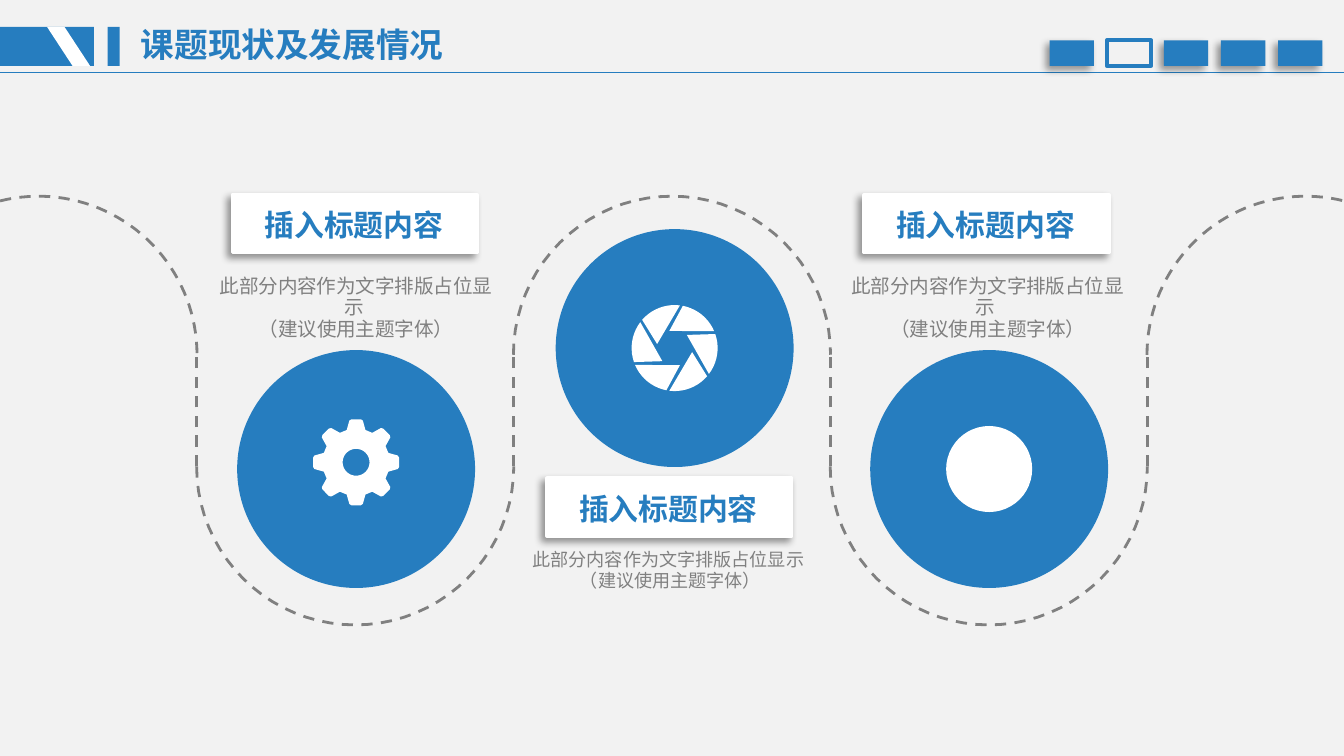
from math import cos, sin, radians
from lxml import etree
from pptx import Presentation
from pptx.dml.color import RGBColor
from pptx.enum import dml, shapes, text
from pptx.oxml.ns import qn
from pptx.util import Inches, Pt

BLUE = RGBColor(0x26, 0x7D, 0xBF)
GRAY = RGBColor(0x80, 0x80, 0x80)
PALE = RGBColor(0xF2, 0xF2, 0xF2)
WHITE = RGBColor(0xFF, 0xFF, 0xFF)
FONT = "Noto Sans CJK SC"
RECT = shapes.MSO_SHAPE.RECTANGLE
OVAL = shapes.MSO_SHAPE.OVAL

# Wave geometry: alternating arcs, one lane wide each
LANE, RADIUS = 2.357, 1.18
HIGH, LOW = 2.64, 3.47


def paint(shape, fill=None, line=None, width=1.0, dash=False):
    shape.shadow.inherit = False
    if fill is None:
        shape.fill.background()
    else:
        shape.fill.solid()
        shape.fill.fore_color.rgb = fill
    if line is None:
        shape.line.fill.background()
    else:
        stroke(shape, line, width, dash)


def stroke(shape, color, width, dash=False):
    shape.line.color.rgb = color
    shape.line.width = Pt(width)
    if dash:
        shape.line.dash_style = dml.MSO_LINE.DASH


def block(slide, kind, box, fill=None, **style):
    shape = slide.shapes.add_shape(kind, *map(Inches, box))
    paint(shape, fill, **style)
    return shape


def cast(shape):
    """Add a soft shadow falling to the lower left."""
    effect = shape._element.spPr.find(qn("a:effectLst"))
    outer = etree.SubElement(effect, qn("a:outerShdw"), blurRad="50800",
                             dist="38100", dir="8100000", algn="tr",
                             rotWithShape="0")
    color = etree.SubElement(outer, qn("a:srgbClr"), val="000000")
    etree.SubElement(color, qn("a:alpha"), val="40000")


def rule(slide, start, end, width, color, dash=False):
    line = slide.shapes.add_connector(shapes.MSO_CONNECTOR.STRAIGHT,
                                      *map(Inches, start + end))
    stroke(line, color, width, dash)
    etree.SubElement(line._element.spPr, qn("a:effectLst"))


def outline(slide, rings, close=True, **style):
    """Draw one freeform made of one or more rings of points."""
    rings = [[(Inches(x), Inches(y)) for x, y in ring] for ring in rings]
    pen = slide.shapes.build_freeform(*rings[0][0])
    for i, ring in enumerate(rings):
        if i:
            pen.move_to(*ring[0])
        pen.add_line_segments(ring[1:], close=close)
    paint(pen.convert_to_shape(), **style)


def arc(x, y, r, start, end, steps=40):
    turns = [radians(start + (end - start) * i / steps)
             for i in range(steps + 1)]
    return [(x + r * cos(t), y + r * sin(t)) for t in turns]


def spin(x, y, points, angle):
    c, s = cos(radians(angle)), sin(radians(angle))
    return [(x + a * c - b * s, y + a * s + b * c) for a, b in points]


def label(slide, box, words, size, color, bold=False, wrap=False):
    frame = slide.shapes.add_textbox(*map(Inches, box)).text_frame
    frame.word_wrap = wrap
    para = frame.paragraphs[0]
    para.text = words
    for run in para.runs:
        run.font.size, run.font.bold, run.font.name = Pt(size), bold, FONT
        run.font.color.rgb = color
        east = etree.SubElement(run.font._element, qn("a:ea"))
        east.set("typeface", FONT)
    return frame


def header(slide, top):
    # Flag with a slanted cut, then the title
    block(slide, RECT, (0, top, 0.7, 0.29), BLUE)
    cut = [(0.35, top), (0.48, top), (0.67, top + 0.29), (0.54, top + 0.29)]
    outline(slide, [cut], fill=WHITE)
    block(slide, RECT, (0.8, top, 0.09, 0.29), BLUE)
    label(slide, (0.95, top - 0.07, 2.51, 0.4), "课题现状及发展情况",
          18, BLUE, bold=True)
    rule(slide, (0, top + 0.34), (10.1, top + 0.34), 1, BLUE)
    # Section markers; the open one is the current section
    for i in range(5):
        box = (7.81 + 0.425 * i, top + 0.1, 0.33, 0.19)
        if i == 1:
            block(slide, RECT, box, line=BLUE, width=2)
        else:
            cast(block(slide, RECT, box, BLUE))


def wave(slide, left):
    look = dict(line=GRAY, width=1.5, dash=True)
    spans = [(256, 360), (180, 0), (180, 360), (180, 0), (180, 284)]
    for i, (start, end) in enumerate(spans):
        y = LOW if i % 2 else HIGH
        points = arc(left + LANE * (i - 0.5), y, RADIUS, start, end)
        outline(slide, [points], close=False, **look)
    for i in range(4):
        x = left + LANE * i
        rule(slide, (x, LOW), (x, HIGH), 1.5, GRAY, dash=True)


def gear(slide, x, y):
    tooth = [(0.24, -0.07), (0.31, -0.05), (0.32, -0.035),
             (0.32, 0.035), (0.31, 0.05), (0.24, 0.07)]
    rim = [p for i in range(8) for p in spin(x, y, tooth, 45 * i)]
    outline(slide, [rim, arc(x, y, 0.1, 360, 0)], fill=WHITE)


def lens(slide, x, y):
    blade = arc(0, 0, 0.32, -83, -139, 10) + [(-0.13, -0.03)]
    outline(slide, [spin(x, y, blade, 60 * i) for i in range(6)], fill=WHITE)


def dot(slide, x, y):
    block(slide, OVAL, (x - 0.32, y - 0.32, 0.64, 0.64), WHITE)


def disc(slide, x, y, icon, lift):
    block(slide, OVAL, (x - 0.885, y - 0.885, 1.77, 1.77), BLUE)
    icon(slide, x, y - lift)


def card(slide, x, y, drop, size, space):
    # Caption
    frame = label(slide, (x - 0.15, y + drop, 2.14, 0.64),
                  "此部分内容作为文字排版占位显示 \v（建议使用主题字体）",
                  size, GRAY, wrap=True)
    frame.margin_left = frame.margin_right = frame.margin_bottom = 0
    frame.margin_top = Inches(0.08)
    para = frame.paragraphs[0]
    para.alignment, para.line_spacing = text.PP_ALIGN.CENTER, space
    # Title plate
    cast(block(slide, RECT, (x, y, 1.82, 0.43), WHITE, line=WHITE, width=2))
    label(slide, (x + 0.14, y + 0.04, 1.69, 0.37), "插入标题内容",
          16, BLUE, bold=True)


def main():
    deck = Presentation()
    deck.slide_width, deck.slide_height = Inches(10), Inches(5.625)
    slide = deck.slides.add_slide(deck.slide_layouts[6])
    slide.background.fill.solid()
    slide.background.fill.fore_color.rgb = PALE

    header(slide, 0.2)
    wave(slide, 1.465)
    for x, y, icon, lift in [(7.36, 3.49, dot, 0), (2.65, 3.49, gear, 0.05),
                             (5.02, 2.59, lens, 0)]:
        disc(slide, x, y, icon, lift)
    for x, y, drop, size, space in [(1.73, 1.45, 0.53, 10.5, 0.9),
                                    (4.07, 3.56, 0.45, 9.7, 0.98),
                                    (6.43, 1.45, 0.53, 10.5, 0.9)]:
        card(slide, x, y, drop, size, space)
    deck.save("out.pptx")


if __name__ == "__main__":
    main()
